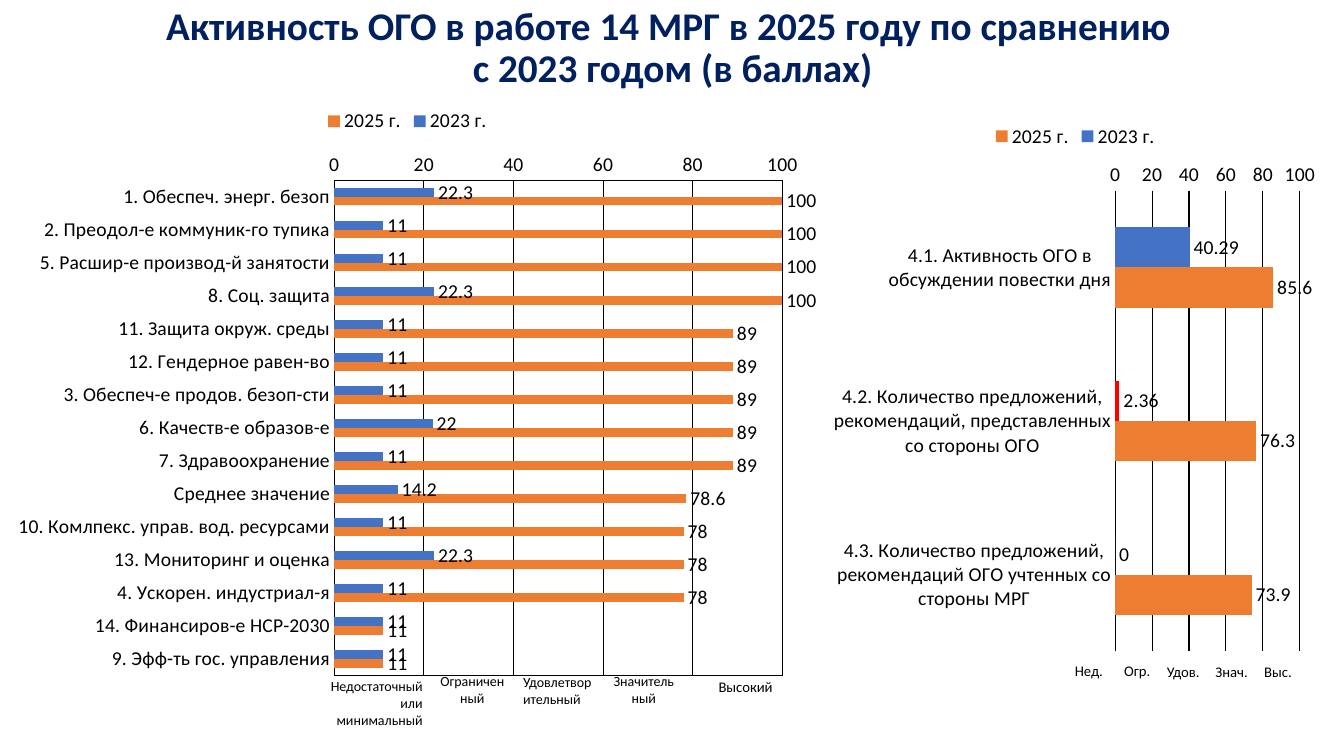
from copy import deepcopy

from lxml import etree
from pptx import Presentation
from pptx import util as u
from pptx.chart.data import CategoryChartData
from pptx.dml.color import RGBColor
from pptx.enum import chart as charts, shapes, text
from pptx.oxml import parse_xml
from pptx.oxml.ns import nsdecls, qn

FONT, NAVY, BLACK, WHITE = "Calibri", "002060", "000000", "FFFFFF"
BLUE, ORANGE, RED = "4472C4", "ED7D31", "FF0000"
LEFT, CENTER, RIGHT = text.PP_ALIGN.LEFT, text.PP_ALIGN.CENTER, text.PP_ALIGN.RIGHT


def rgb(value):
    return RGBColor.from_string(value)


def set_font(font, size, color=BLACK, bold=False):
    font.name, font.size, font.bold = FONT, u.Pt(size), bold
    font.color.rgb = rgb(color)


def set_line(line, color=BLACK):
    line.color.rgb = rgb(color)
    line.width = u.Pt(0)


class ActivitySlide:
    """Hold the slide and draw its title, bar charts and scale labels."""

    def __init__(self, deck):
        self.slide = deck.slides.add_slide(deck.slide_layouts[5])

    def title(self, lines, box):
        title = self.slide.shapes.title
        title.left, title.top, title.width, title.height = map(u.Inches, box)
        frame = title.text_frame
        frame.auto_size = text.MSO_AUTO_SIZE.NONE
        frame.vertical_anchor = text.MSO_ANCHOR.MIDDLE
        paragraph = frame.paragraphs[0]
        paragraph.alignment, paragraph.line_spacing = CENTER, 0.9
        for line in lines:
            run = paragraph.add_run()
            run.text = line
            set_font(run.font, 28, NAVY, True)
            paragraph.add_line_break()
            paragraph._p[-1].append(deepcopy(run._r.rPr))
        paragraph._p.get_or_add_endParaRPr().set("sz", "2800")

    def scale_label(self, wording, box, size=10.5, align=CENTER):
        label = self.slide.shapes.add_shape(
            shapes.MSO_SHAPE.RECTANGLE, *map(u.Inches, box))
        label.shadow.inherit = False
        label.fill.solid()
        label.fill.fore_color.rgb = rgb(WHITE)
        label.line.fill.background()
        frame = label.text_frame
        frame.word_wrap = True
        frame.vertical_anchor = text.MSO_ANCHOR.MIDDLE
        paragraph = frame.paragraphs[0]
        paragraph.alignment = align
        run = paragraph.add_run()
        run.text = wording
        set_font(run.font, size)

    def bar_chart(self, rows, box, plot_box, fill=None, framed=False):
        data = CategoryChartData()
        data.categories = [row[0] for row in rows]
        data.add_series("2023 г.", [row[1] for row in rows])
        data.add_series("2025 г.", [row[2] for row in rows])
        chart = self.slide.shapes.add_chart(
            charts.XL_CHART_TYPE.BAR_CLUSTERED, *map(u.Inches, box), data).chart
        chart.has_title = False
        set_font(chart.font, 14)
        chart.has_legend = True
        chart.legend.position = charts.XL_LEGEND_POSITION.TOP
        chart.legend.include_in_layout = False
        set_font(chart.legend.font, 14)
        self.axes(chart)
        self.bars(chart.plots[0])
        self.areas(chart, plot_box, fill, framed)
        return chart

    def axes(self, chart):
        for axis in (chart.category_axis, chart.value_axis):
            axis.major_tick_mark = axis.minor_tick_mark = charts.XL_TICK_MARK.NONE
            set_font(axis.tick_labels.font, 14)
        chart.category_axis.reverse_order = True
        set_line(chart.category_axis.format.line)
        scale = chart.value_axis
        scale.minimum_scale, scale.maximum_scale, scale.major_unit = 0, 100, 20
        scale.has_major_gridlines = True
        set_line(scale.major_gridlines.format.line)
        scale.format.line.fill.background()

    def bars(self, plot):
        plot.gap_width, plot.overlap, plot.vary_by_categories = 182, 0, False
        for series, color in zip(plot.series, (BLUE, ORANGE)):
            series.format.fill.solid()
            series.format.fill.fore_color.rgb = rgb(color)
            series.invert_if_negative = False
            labels = series.data_labels
            labels.show_value = True
            labels.position = charts.XL_LABEL_POSITION.OUTSIDE_END
            set_font(labels.font, 14)

    def areas(self, chart, plot_box, fill, framed):
        paint = f'<a:solidFill><a:srgbClr val="{fill}"/></a:solidFill>' if fill else "<a:noFill/>"
        frame = f'<a:solidFill><a:srgbClr val="{BLACK}"/></a:solidFill>' if framed else "<a:noFill/>"
        area = '<c:spPr {}>{}<a:ln w="0">{}</a:ln></c:spPr>'
        names = nsdecls("c", "a")
        chart_node = chart._chartSpace.find(qn("c:chart"))
        chart_node.addnext(parse_xml(area.format(names, paint, "<a:noFill/>")))
        plot_area = chart_node.find(qn("c:plotArea"))
        plot_area.append(parse_xml(area.format(names, "<a:noFill/>", frame)))
        for old in plot_area.findall(qn("c:layout")):
            plot_area.remove(old)
        layout = etree.Element(qn("c:layout"))
        manual = etree.SubElement(layout, qn("c:manualLayout"))
        settings = [("layoutTarget", "inner"), ("xMode", "edge"), ("yMode", "edge")]
        for tag, value in settings + list(zip("xywh", plot_box)):
            etree.SubElement(manual, qn(f"c:{tag}")).set("val", str(value))
        plot_area.insert(0, layout)


GROUPS = [
    ("1. Обеспеч. энерг. безоп", 22.3, 100),
    ("2. Преодол-е коммуник-го тупика", 11, 100),
    ("5. Расшир-е производ-й занятости", 11, 100),
    ("8. Соц. защита", 22.3, 100),
    ("11. Защита окруж. среды", 11, 89),
    ("12. Гендерное равен-во", 11, 89),
    ("3. Обеспеч-е продов. безоп-сти", 11, 89),
    ("6. Качеств-е образов-е", 22, 89),
    ("7. Здравоохранение", 11, 89),
    ("Среднее значение", 14.2, 78.6),
    ("10. Комлпекс. управ. вод. ресурсами", 11, 78),
    ("13. Мониторинг и оценка", 22.3, 78),
    ("4. Ускорен. индустриал-я", 11, 78),
    ("14. Финансиров-е НСР-2030", 11, 11),
    ("9. Эфф-ть гос. управления", 11, 11),
]
INDICATORS = [
    ("4.1. Активность ОГО в обсуждении повестки дня", 40.29, 85.6),
    ("4.2. Количество предложений, рекомендаций, представленных со стороны ОГО", 2.36, 76.3),
    ("4.3. Количество предложений, рекомендаций ОГО учтенных со стороны МРГ", 0, 73.9),
]
FULL_SCALE = [
    ("Недостаточный или минимальный", (3.12, 6.71, 1.17, 0.53), 10, RIGHT),
    ("Ограниченный", (4.26, 6.68, 0.85, 0.32), 10, CENTER),
    ("Удовлетворительный", (5.09, 6.6, 0.93, 0.49), 10, LEFT),
    ("Значительный", (5.98, 6.68, 0.81, 0.32), 10, CENTER),
    ("Высокий", (6.99, 6.65, 0.81, 0.32), 10.5, CENTER),
]
SHORT_SCALE = [
    ("Нед.", (10.55, 6.49, 0.5, 0.32)),
    ("Огр.", (11.03, 6.49, 0.5, 0.32)),
    ("Удов.", (11.46, 6.5, 0.55, 0.32)),
    ("Знач.", (11.94, 6.5, 0.55, 0.32)),
    ("Выс.", (12.4, 6.5, 0.55, 0.32)),
]


def main():
    deck = Presentation()
    deck.slide_width, deck.slide_height = u.Inches(13.33), u.Inches(7.5)
    activity = ActivitySlide(deck)
    activity.title(["Активность ОГО в работе 14 МРГ в 2025 году по сравнению ",
                    "с 2023 годом (в баллах)"], (0.92, 0.38, 11.5, 0.67))
    for label in FULL_SCALE:
        activity.scale_label(*label)
    activity.bar_chart(GROUPS, (0, 0.97, 8.1, 5.85), (0.41, 0.14, 0.55, 0.84), framed=True)
    indicators = activity.bar_chart(
        INDICATORS, (8.19, 1.12, 4.95, 5.51), (0.58, 0.14, 0.37, 0.83), fill=WHITE)
    proposals = indicators.plots[0].series[0].points[1].format.fill
    proposals.solid()
    proposals.fore_color.rgb = rgb(RED)
    for label in SHORT_SCALE:
        activity.scale_label(*label)
    deck.save("out.pptx")


if __name__ == "__main__":
    main()
